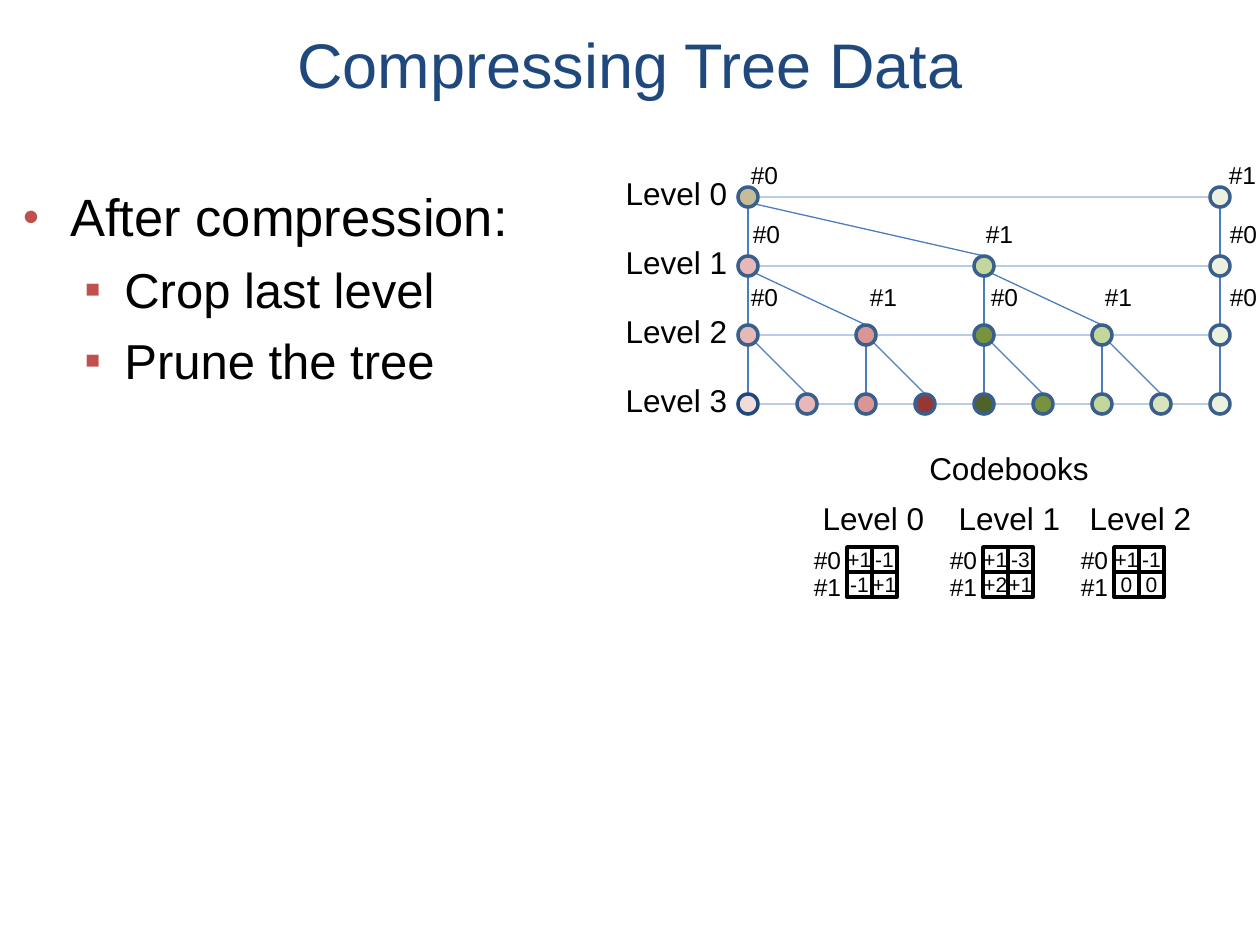
from lxml.etree import SubElement
from pptx import Presentation
from pptx.dml.color import RGBColor
from pptx.enum.shapes import MSO_CONNECTOR, MSO_SHAPE
from pptx.enum.text import MSO_ANCHOR, MSO_AUTO_SIZE, PP_ALIGN
from pptx.oxml import parse_xml
from pptx.oxml.ns import nsdecls, qn
from pptx.util import Emu, Pt

PX_PER_INCH = 126
FONT = "Arial"

BLACK = RGBColor(0x00, 0x00, 0x00)
WHITE = RGBColor(0xFF, 0xFF, 0xFF)
NAVY = RGBColor(0x1F, 0x49, 0x7D)
BULLET_RED = RGBColor(0xC0, 0x50, 0x4D)
NODE_LINE = RGBColor(0x3A, 0x5F, 0x8C)
EDGE = RGBColor(0x4B, 0x7E, 0xBC)
LEVEL_LINE = RGBColor(0xB9, 0xCD, 0xE5)
TAN = RGBColor(0xC4, 0xBD, 0x97)
PALE_RED = RGBColor(0xF2, 0xDC, 0xDB)
LIGHT_RED = RGBColor(0xE6, 0xB9, 0xB8)
MID_RED = RGBColor(0xD9, 0x96, 0x94)
DARK_RED = RGBColor(0x95, 0x37, 0x35)
PALE_GREEN = RGBColor(0xEB, 0xF1, 0xDE)
SOFT_GREEN = RGBColor(0xD7, 0xE4, 0xBD)
LIGHT_GREEN = RGBColor(0xC3, 0xD6, 0x9B)
MID_GREEN = RGBColor(0x77, 0x93, 0x3C)
DARK_GREEN = RGBColor(0x4F, 0x62, 0x28)

# Tree grid: the leaves share one pitch, each level halves the step
TREE_X, TREE_Y = 748, 197
LEAF_PITCH, LEVEL_PITCH = 59, 69
LAST_LEAF = 8
RADIUS, DIAGONAL = 10, 7
LEVELS = [
    [TAN, PALE_GREEN],
    [LIGHT_RED, LIGHT_GREEN, PALE_GREEN],
    [LIGHT_RED, MID_RED, MID_GREEN, LIGHT_GREEN, PALE_GREEN],
    [PALE_RED, LIGHT_RED, MID_RED, DARK_RED, DARK_GREEN, MID_GREEN,
     LIGHT_GREEN, SOFT_GREEN, PALE_GREEN],
]
# Top of each row of codes, then the left and text of each code
CODE_ROWS = [
    (154, [(738, "#0"), (1216, "#1")]),
    (213, [(740, "#0"), (973, "#1"), (1217, "#0")]),
    (276, [(738, "#0"), (857, "#1"), (978, "#0"), (1092, "#1"), (1217, "#0")]),
]
CELL = 25
CODEBOOKS = [
    (847, "Level 0", [["+1", "-1"], ["-1", "+1"]]),
    (983, "Level 1", [["+1", "-3"], ["+2", "+1"]]),
    (1114, "Level 2", [["+1", "-1"], ["0", "0"]]),
]


def px(*lengths):
    return [Emu(round(n * 914400 / PX_PER_INCH)) for n in lengths]


def write(paragraph, text, size=18, color=BLACK, align=PP_ALIGN.CENTER,
          shadow=False):
    paragraph.alignment = align
    run = paragraph.add_run()
    run.text = text
    run.font.size = Pt(size)
    run.font.name = FONT
    run.font.color.rgb = color
    if shadow:
        fill = run.font._element.find(qn("a:solidFill"))
        fill.addnext(parse_xml(
            f'<a:effectLst {nsdecls("a")}><a:outerShdw blurRad="38100" '
            'dist="38100" dir="2700000" algn="tl"><a:srgbClr val="000000">'
            '<a:alpha val="43000"/></a:srgbClr></a:outerShdw></a:effectLst>'))


def set_margins(frame, x, y):
    frame.margin_left, frame.margin_right = px(x, x)
    frame.margin_top, frame.margin_bottom = px(y, y)


def add_label(slide, text, box, size=18, margins=None):
    frame = slide.shapes.add_textbox(*px(*box)).text_frame
    frame.word_wrap = False
    if margins is not None:
        set_margins(frame, margins, margins)
    write(frame.paragraphs[0], text, size=size)


def add_line(slide, start, end, color):
    line = slide.shapes.add_connector(
        MSO_CONNECTOR.STRAIGHT, *px(*start, *end))
    line.line.color.rgb = color
    line.line.width = Pt(0.75)
    SubElement(line._element.spPr, qn("a:effectLst"))


def add_figure(slide, kind, box, fill, outline):
    figure = slide.shapes.add_shape(kind, *px(*box))
    figure.shadow.inherit = False
    figure.fill.solid()
    figure.fill.fore_color.rgb = fill
    figure.line.color.rgb = outline
    figure.line.width = Pt(2)
    return figure


def add_bullet(paragraph, char, percent, indent, hanging):
    properties = paragraph._p.get_or_add_pPr()
    left, hang = px(indent, hanging)
    properties.set("marL", str(left))
    properties.set("indent", str(-hang))
    color = SubElement(properties, qn("a:buClr"))
    SubElement(color, qn("a:srgbClr"), val=str(BULLET_RED))
    SubElement(properties, qn("a:buSzPct"), val=str(percent * 1000))
    SubElement(properties, qn("a:buFont"), typeface=FONT)
    SubElement(properties, qn("a:buChar"), char=char)


def add_title(slide, text):
    title = slide.shapes.title
    title.left, title.top, title.width, title.height = px(0, 0, 1260, 136)
    frame = title.text_frame
    frame.word_wrap = True
    frame.auto_size = MSO_AUTO_SIZE.NONE
    frame.vertical_anchor = MSO_ANCHOR.MIDDLE
    frame.paragraphs[0].line_spacing = 0.9
    write(frame.paragraphs[0], text, size=36, color=NAVY, shadow=True)


def add_outline(slide, heading, points):
    frame = slide.shapes.add_textbox(*px(10, 178, 546, 457)).text_frame
    frame.word_wrap = True
    first = frame.paragraphs[0]
    add_bullet(first, "●", 55, 48, 48)
    write(first, heading, size=30, align=PP_ALIGN.LEFT, shadow=True)
    for point in points:
        paragraph = frame.add_paragraph()
        paragraph.level = 1
        add_bullet(paragraph, "■", 50, 102, 39)
        paragraph.space_before = Pt(7)
        write(paragraph, point, size=28, align=PP_ALIGN.LEFT, shadow=True)


def node_center(level, leaf):
    return TREE_X + leaf * LEAF_PITCH, TREE_Y + level * LEVEL_PITCH


def add_edges(slide, level, leaf, step):
    """Join a node to the one below it and to its right-hand child."""
    x, y = node_center(level, leaf)
    child_top = y + LEVEL_PITCH - RADIUS
    add_line(slide, (x, y + RADIUS), (x, child_top), EDGE)
    if leaf < LAST_LEAF:
        child_x, _ = node_center(level + 1, leaf + step // 2)
        add_line(slide, (x + DIAGONAL, y + DIAGONAL), (child_x, child_top), EDGE)


def add_tree(slide):
    for level, colors in enumerate(LEVELS):
        step = LAST_LEAF // (len(colors) - 1)
        left, y = node_center(level, 0)
        right, _ = node_center(level, LAST_LEAF)
        add_line(slide, (left - RADIUS, y), (right + RADIUS, y), LEVEL_LINE)
        for index, color in enumerate(colors):
            leaf = index * step
            x, _ = node_center(level, leaf)
            if level < len(LEVELS) - 1:
                add_edges(slide, level, leaf, step)
            add_figure(slide, MSO_SHAPE.OVAL,
                       (x - RADIUS, y - RADIUS, 2 * RADIUS, 2 * RADIUS),
                       color, NAVY if color == PALE_RED else NODE_LINE)
        add_label(slide, f"Level {level}", (612, y - 29, 129, 50))
    for top, codes in CODE_ROWS:
        for left, code in codes:
            add_label(slide, code, (left, top, 53, 43), size=14)


def add_codebook(slide, left, heading, rows):
    add_label(slide, heading, (left - 38, 493, 129, 50))
    for row, values in enumerate(rows):
        for column, value in enumerate(values):
            cell = add_figure(
                slide, MSO_SHAPE.RECTANGLE,
                (left + column * CELL, 547 + row * CELL, CELL, CELL),
                WHITE, BLACK)
            frame = cell.text_frame
            frame.word_wrap = False
            frame.vertical_anchor = MSO_ANCHOR.MIDDLE
            set_margins(frame, 0, 0)
            write(frame.paragraphs[0], value, size=12)
        add_label(slide, f"#{row}", (left - 36, 543 + row * 27, 33, 35),
                  size=14, margins=2)


def main():
    deck = Presentation()
    deck.slide_width, deck.slide_height = px(1260, 945)
    slide = deck.slides.add_slide(deck.slide_layouts[5])
    add_title(slide, "Compressing Tree Data")
    add_outline(slide, "After compression:",
                ["Crop last level", "Prune the tree"])
    add_tree(slide)
    # Codebooks below the tree
    add_label(slide, "Codebooks", (916, 443, 186, 50))
    for left, heading, rows in CODEBOOKS:
        add_codebook(slide, left, heading, rows)
    deck.save("out.pptx")


if __name__ == "__main__":
    main()
